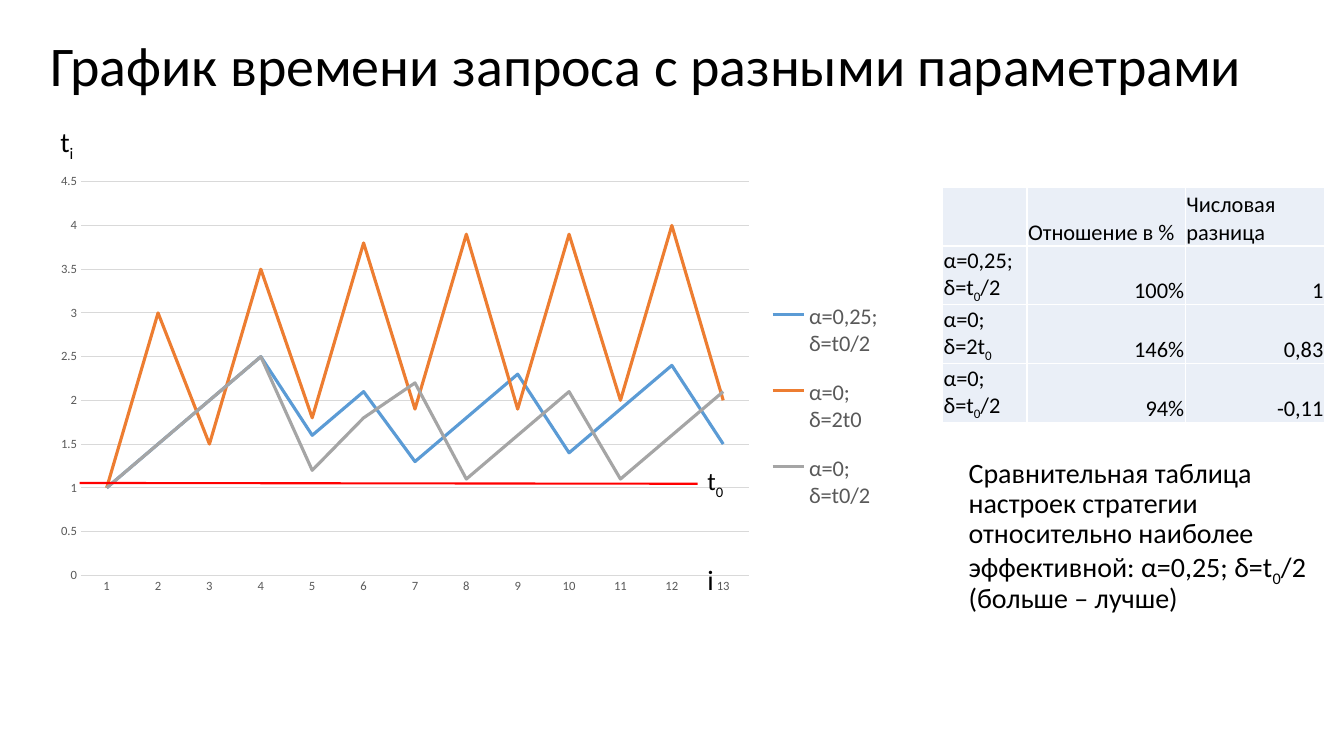
import pptx
import pptx.chart.data
import pptx.dml.color
import pptx.enum.chart
import pptx.enum.shapes
import pptx.enum.text
import pptx.oxml
import pptx.oxml.ns
import pptx.util

Cm, Pt = pptx.util.Cm, pptx.util.Pt
RGBColor = pptx.dml.color.RGBColor
Align = pptx.enum.text.PP_ALIGN
Anchor = pptx.enum.text.MSO_ANCHOR
qn = pptx.oxml.ns.qn

# Content: "_" lowers the next character, "\n" starts a paragraph
HEADING = "График времени запроса с разными параметрами"
CAPTION = ("Сравнительная таблица настроек стратегии относительно наиболее "
           "эффективной: α=0,25; δ=t_0/2\n(больше – лучше)")
SERIES = [
    ("α=0,25; δ=t0/2", [1, 1.5, 2, 2.5, 1.6, 2.1, 1.3, 1.8, 2.3, 1.4, 1.9, 2.4, 1.5]),
    ("α=0; δ=2t0", [1, 3, 1.5, 3.5, 1.8, 3.8, 1.9, 3.9, 1.9, 3.9, 2, 4, 2]),
    ("α=0; δ=t0/2", [1, 1.5, 2, 2.5, 1.2, 1.8, 2.2, 1.1, 1.6, 2.1, 1.1, 1.6, 2.1]),
]
TABLE = [
    ["", "Отношение в %", "Числовая разница"],
    ["α=0,25; δ=t_0/2", "100%", "1"],
    ["α=0;\nδ=2t_0", "146%", "0,83"],
    ["α=0;\nδ=t_0/2", "94%", "-0,11"],
]
COLUMN_WIDTHS = [2.13, 3.99, 3.51]
ROW_HEIGHT = 1.48
# text, left, top, width, height, size
AXIS_LABELS = [
    ("t_i", 1.27, 3.02, 0.86, 1.12, 20),
    ("i", 17.58, 14.05, 0.69, 1.12, 20),
    ("t_0", 17.58, 11.61, 0.94, 1.02, 18),
]

# Look
FONT = "Calibri"
BLACK = RGBColor(0x00, 0x00, 0x00)
GREY = RGBColor(0x59, 0x59, 0x59)
GRID = RGBColor(0xD9, 0xD9, 0xD9)
RED = RGBColor(0xFF, 0x00, 0x00)
CELL = RGBColor(0xEA, 0xEF, 0xF7)
LINES = [RGBColor(0x5B, 0x9B, 0xD5), RGBColor(0xED, 0x7D, 0x31), RGBColor(0xA5, 0xA5, 0xA5)]


def set_font(font, size, color=BLACK):
    font.name, font.size = FONT, Pt(size)
    font.color.rgb = color


def write(frame, text, size=20, align=Align.LEFT, anchor=Anchor.TOP, spacing=None, wrap=True):
    frame.word_wrap = wrap
    frame.vertical_anchor = anchor
    for number, line in enumerate(text.split("\n")):
        para = frame.add_paragraph() if number else frame.paragraphs[0]
        para.alignment, para.line_spacing = align, spacing
        plain, *lowered = line.split("_")
        pieces = [(plain, False)]
        for part in lowered:
            pieces += [(part[0], True), (part[1:], False)]
        for piece, is_lowered in pieces:
            if piece:
                span = para.add_run()
                span.text = piece
                set_font(span.font, size)
                if is_lowered:
                    span.font._element.set("baseline", "-25000")


def place(parent, index, x, y, w, h, inner=False):
    """Fix the plot area or legend at fractions of the chart frame."""
    for old in parent.findall(qn("c:layout")):
        parent.remove(old)
    target = '<c:layoutTarget val="inner"/>' if inner else ""
    parent.insert(index, pptx.oxml.parse_xml(
        f'<c:layout {pptx.oxml.ns.nsdecls("c")}><c:manualLayout>{target}'
        '<c:xMode val="edge"/><c:yMode val="edge"/>'
        f'<c:x val="{x}"/><c:y val="{y}"/><c:w val="{w}"/><c:h val="{h}"/>'
        '</c:manualLayout></c:layout>'))


def add_chart(page):
    data = pptx.chart.data.CategoryChartData()
    data.categories = [str(step) for step in range(1, 14)]
    for name, values in SERIES:
        data.add_series(name, values)
    chart = page.shapes.add_chart(pptx.enum.chart.XL_CHART_TYPE.LINE, Cm(1.19), Cm(4.14),
                                  Cm(21.31), Cm(11.02), data).chart
    set_font(chart.font, 10)
    chart.has_title = False
    chart.plots[0].vary_by_categories = False
    for series, color in zip(chart.plots[0].series, LINES):
        series.smooth = False
        series.format.line.color.rgb = color
        series.format.line.width = Pt(2.25)
        series.marker.style = pptx.enum.chart.XL_MARKER_STYLE.NONE

    # Axes
    for axis in (chart.category_axis, chart.value_axis):
        axis.major_tick_mark = axis.minor_tick_mark = pptx.enum.chart.XL_TICK_MARK.NONE
        set_font(axis.tick_labels.font, 9, GREY)
    values_axis = chart.value_axis
    values_axis.minimum_scale, values_axis.maximum_scale, values_axis.major_unit = 0, 4.5, 0.5
    values_axis.format.line.fill.background()
    for line in (chart.category_axis.format.line, values_axis.major_gridlines.format.line):
        line.color.rgb, line.width = GRID, Pt(0.75)

    # Legend and plot area
    chart.has_legend = True
    chart.legend.position = pptx.enum.chart.XL_LEGEND_POSITION.RIGHT
    chart.legend.include_in_layout = False
    set_font(chart.legend.font, 16, GREY)
    place(chart.legend._element, 1, 0.85, 0.27, 0.14, 0.57)
    place(chart._chartSpace.chart.plotArea, 0, 0.04, 0.04, 0.79, 0.9, inner=True)


def add_table(page):
    table = page.shapes.add_table(len(TABLE), len(COLUMN_WIDTHS), Cm(23.75), Cm(4.72),
                                  Cm(sum(COLUMN_WIDTHS)), Cm(ROW_HEIGHT * len(TABLE))).table
    for column, width in zip(table.columns, COLUMN_WIDTHS):
        column.width = Cm(width)
    for row_number, texts in enumerate(TABLE):
        table.rows[row_number].height = Cm(ROW_HEIGHT)
        for column_number, text in enumerate(texts):
            cell = table.cell(row_number, column_number)
            cell.margin_left = cell.margin_right = cell.margin_top = Cm(0.03)
            cell.margin_bottom = 0
            cell.vertical_anchor = Anchor.BOTTOM
            is_number = row_number > 0 and column_number > 0
            cell_align = Align.RIGHT if is_number else Align.LEFT
            for side in ("lnL", "lnR", "lnT", "lnB"):
                cell._tc.get_or_add_tcPr().append(pptx.oxml.parse_xml(
                    f'<a:{side} {pptx.oxml.ns.nsdecls("a")} w="12700"><a:solidFill>'
                    f'<a:srgbClr val="FFFFFF"/></a:solidFill></a:{side}>'))
            cell.fill.solid()
            cell.fill.fore_color.rgb = CELL
            frame = cell.text_frame
            write(frame, text, size=16, align=cell_align, anchor=None, wrap=None)


def add_box(page, left, top, width, height):
    return page.shapes.add_textbox(Cm(left), Cm(top), Cm(width), Cm(height)).text_frame


def main():
    deck = pptx.Presentation()
    deck.slide_width, deck.slide_height = Cm(33.87), Cm(19.05)
    page = deck.slides.add_slide(deck.slide_layouts[5])

    # Heading
    title = page.shapes.title
    title.left, title.top, title.width, title.height = Cm(1.02), Cm(0.64), Cm(30.84), Cm(2.74)
    title.text_frame.auto_size = pptx.enum.text.MSO_AUTO_SIZE.NONE
    write(title.text_frame, HEADING, size=40, wrap=False)

    add_chart(page)

    # Level line t0 and axis labels
    level = page.shapes.add_connector(pptx.enum.shapes.MSO_CONNECTOR.STRAIGHT,
                                      Cm(2.01), Cm(12.17), Cm(17.58), Cm(12.19))
    level.line.color.rgb, level.line.width = RED, Pt(1.5)
    level._element.spPr.append(pptx.oxml.parse_xml(
        f'<a:effectLst {pptx.oxml.ns.nsdecls("a")}/>'))
    for text, left, top, width, height, size in AXIS_LABELS:
        write(add_box(page, left, top, width, height), text, size=size, wrap=False)

    # Comparison table and its caption
    add_table(page)
    write(add_box(page, 24.16, 10.92, 9.22, 5.21), CAPTION, anchor=Anchor.MIDDLE, spacing=0.9)
    deck.save("out.pptx")


if __name__ == "__main__":
    main()
